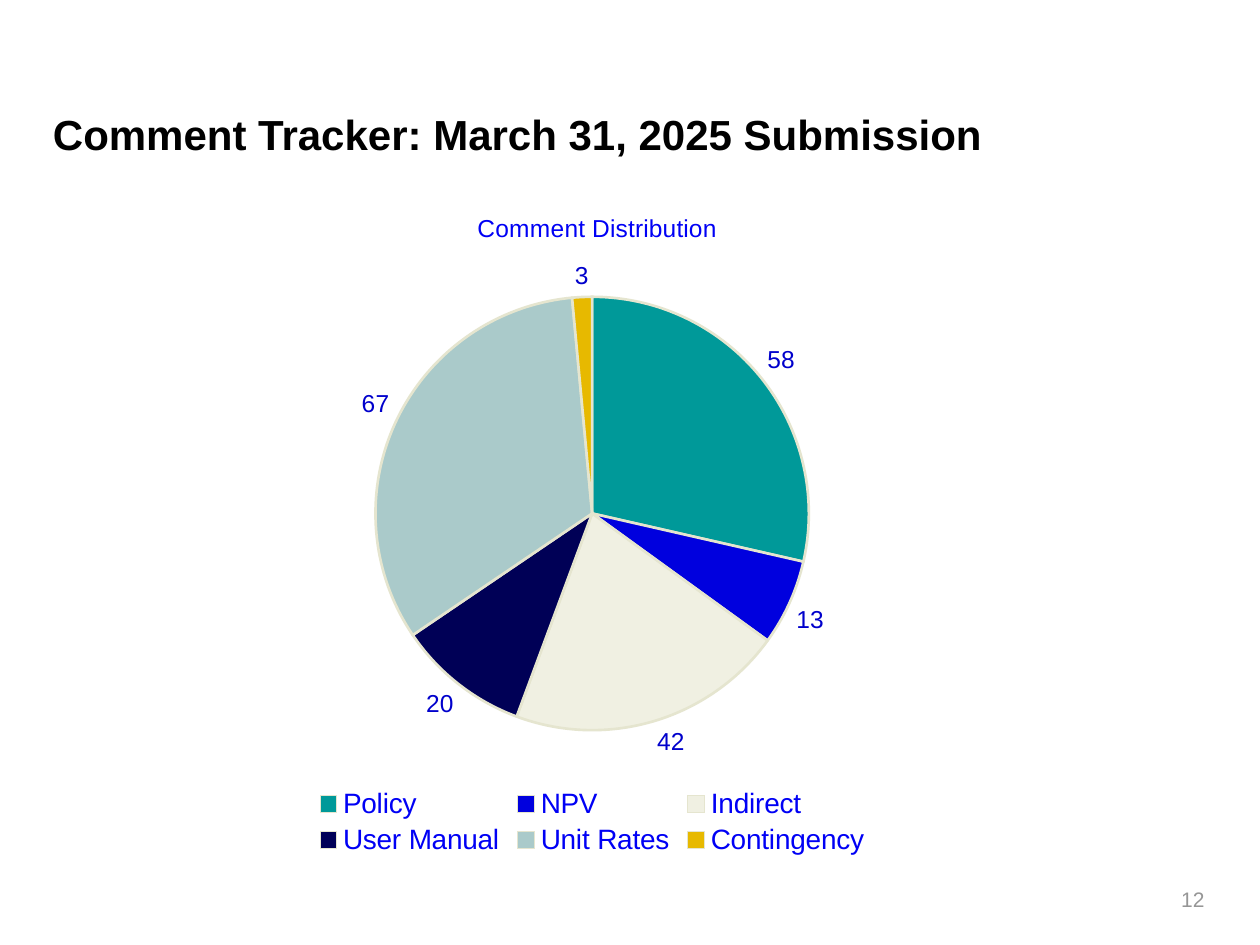
"""Build the comment tracker slide with its pie chart."""
from lxml.etree import SubElement
from pptx import Presentation
from pptx.chart.data import CategoryChartData as ChartData
from pptx.dml.color import RGBColor
from pptx.enum.chart import XL_CHART_TYPE as Kind, XL_LABEL_POSITION as Spot
from pptx.enum.chart import XL_LEGEND_POSITION as Side
from pptx.enum.text import MSO_ANCHOR as Anchor, PP_ALIGN as Align
from pptx.oxml.ns import qn
from pptx.util import Inches, Pt

TITLE = "Comment Tracker: March 31, 2025 Submission"
NUMBER = "12"
HEAD = "Comment Distribution"
SLICES = [
    ("Policy", 58, "009999"),
    ("NPV", 13, "0000DE"),
    ("Indirect", 42, "F0F0E2"),
    ("User Manual", 20, "000056"),
    ("Unit Rates", 67, "AACACA"),
    ("Contingency", 3, "E7B900"),
]
EDGE = "E5E5CF"


def paint(target, color):
    target.rgb = RGBColor.from_string(color)


def style(font, size, color, bold=False):
    font.name, font.size, font.bold = "Arial", Pt(size), bold
    paint(font.color, color)


def add_text(slide, box, text, size, color, bold=False, align=Align.LEFT):
    frame = slide.shapes.add_textbox(*map(Inches, box)).text_frame
    frame.word_wrap = True
    frame.vertical_anchor = Anchor.MIDDLE
    frame.margin_left = frame.margin_right = 0
    frame.margin_top = frame.margin_bottom = 0
    para = frame.paragraphs[0]
    para.alignment = align
    run = para.add_run()
    run.text = text
    style(run.font, size, color, bold)


def place(parent, index, **parts):
    for old in parent.findall(qn("c:layout")):
        parent.remove(old)
    layout = SubElement(parent, qn("c:layout"))
    parent.insert(index, layout)
    manual = SubElement(layout, qn("c:manualLayout"))
    for name, value in parts.items():
        SubElement(manual, qn(f"c:{name}")).set("val", str(value))


def add_pie(slide, box):
    names, values, colors = zip(*SLICES)
    data = ChartData()
    data.categories = names
    data.add_series("Series 1", values)
    chart = slide.shapes.add_chart(Kind.PIE, *map(Inches, box), data).chart
    style(chart.font, 10, "000066")

    chart.has_title = True
    run = chart.chart_title.text_frame.paragraphs[0].add_run()
    run.text = HEAD
    style(run.font, 14, "0000F5")
    chart.has_legend = True
    chart.legend.position = Side.BOTTOM
    chart.legend.include_in_layout = False
    style(chart.legend.font, 16, "0000F5")

    plot = chart.plots[0]
    plot.vary_by_categories = True
    plot.has_data_labels = True
    labels = plot.data_labels
    labels.show_value = True
    labels.position = Spot.OUTSIDE_END
    style(labels.font, 14, "0000CC")
    for i, color in enumerate(colors):
        look = plot.series[0].points[i].format
        look.fill.solid()
        paint(look.fill.fore_color, color)
        paint(look.line.color, EDGE)
        look.line.width = Pt(1.5)

    root = chart._chartSpace.find(qn("c:chart"))
    place(root.find(qn("c:title")), 1, xMode="edge", yMode="edge", x=0.39, y=0.04)
    place(root.find(qn("c:plotArea")), 0, layoutTarget="inner", xMode="edge",
          yMode="edge", x=0.3, y=0.17, w=0.4, h=0.64)


def main():
    deck = Presentation()
    deck.slide_width, deck.slide_height = Inches(10), Inches(7.5)
    slide = deck.slides.add_slide(deck.slide_layouts[6])
    add_text(slide, (0.42, 0.9, 8.58, 0.33), TITLE, 24, "000000", True)
    add_pie(slide, (0.4, 1.43, 8.6, 5.4))
    add_text(slide, (8.83, 6.97, 0.73, 0.33), NUMBER, 12, "969696", align=Align.RIGHT)
    deck.save("out.pptx")


if __name__ == "__main__":
    main()
